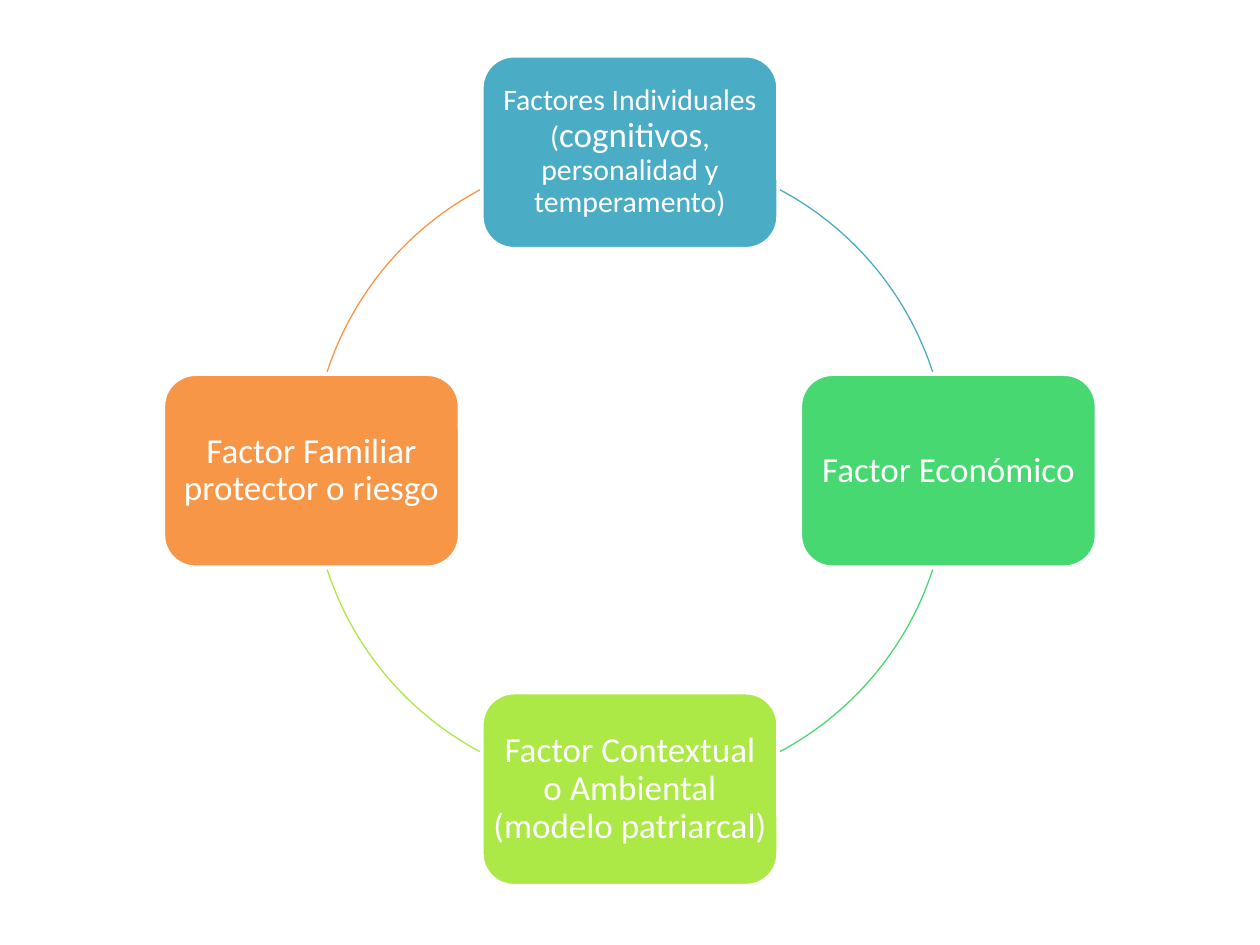
from dataclasses import dataclass
from math import cos, radians, sin

from pptx import Presentation
from pptx.dml.color import RGBColor
from pptx.enum.shapes import MSO_SHAPE as Preset
from pptx.enum.text import MSO_ANCHOR as Anchor, PP_ALIGN as Align
from pptx.shapes.shapetree import SlideShapes
from pptx.util import Cm, Pt

WHITE = RGBColor(0xFF, 0xFF, 0xFF)
BLUE = RGBColor(0x4B, 0xAC, 0xC6)
GREEN = RGBColor(0x47, 0xD8, 0x72)
LIME = RGBColor(0xAC, 0xE9, 0x46)
ORANGE = RGBColor(0xF7, 0x96, 0x46)

FONT = "Calibri"
CENTER_X, CENTER_Y, RADIUS = 12.7, 9.49, 6.42
BOX_WIDTH, BOX_HEIGHT = 5.97, 3.89
TEXT_INSET = Cm(0.03)
POLE_CLEARANCE, SIDE_CLEARANCE = 28.1, 18.1
ARC_UNITS_PER_DEGREE = 0.6


@dataclass(frozen=True)
class TextRun:
    text: str
    size: int = 20


@dataclass(frozen=True)
class Factor:
    color: RGBColor
    clearance: float
    runs: tuple[TextRun, ...]


FACTORS = (
    Factor(BLUE, POLE_CLEARANCE, (
        TextRun("Factores Individuales (", 17),
        TextRun("cognitivos"),
        TextRun(", personalidad y temperamento)", 17),
    )),
    Factor(GREEN, SIDE_CLEARANCE, (TextRun("Factor Económico"),)),
    Factor(LIME, POLE_CLEARANCE, (
        TextRun("Factor Contextual o Ambiental (modelo patriarcal)"),
    )),
    Factor(ORANGE, SIDE_CLEARANCE, (TextRun("Factor Familiar protector o riesgo"),)),
)


def draw_box(shapes: SlideShapes, factor: Factor, angle: float) -> None:
    left = CENTER_X + RADIUS * cos(radians(angle)) - BOX_WIDTH / 2
    top = CENTER_Y + RADIUS * sin(radians(angle)) - BOX_HEIGHT / 2
    shape = shapes.add_shape(
        Preset.ROUNDED_RECTANGLE, Cm(left), Cm(top), Cm(BOX_WIDTH), Cm(BOX_HEIGHT)
    )
    shape.shadow.inherit = False
    shape.fill.solid()
    shape.fill.fore_color.rgb = factor.color
    shape.line.color.rgb = WHITE
    shape.line.width = Pt(2)

    frame = shape.text_frame
    frame.word_wrap = True
    frame.vertical_anchor = Anchor.MIDDLE
    frame.margin_left = frame.margin_right = TEXT_INSET
    frame.margin_top = frame.margin_bottom = TEXT_INSET
    paragraph = frame.paragraphs[0]
    paragraph.alignment = Align.CENTER
    paragraph.line_spacing = 0.9
    for text_run in factor.runs:
        run = paragraph.add_run()
        run.text = text_run.text
        run.font.name = FONT
        run.font.size = Pt(text_run.size)
        run.font.color.rgb = WHITE


def draw_arc(shapes: SlideShapes, color: RGBColor, start: float, end: float) -> None:
    shape = shapes.add_shape(
        Preset.ARC,
        Cm(CENTER_X - RADIUS), Cm(CENTER_Y - RADIUS),
        Cm(2 * RADIUS), Cm(2 * RADIUS),
    )
    for index, angle in enumerate((start, end)):
        shape.adjustments[index] = angle % 360 * ARC_UNITS_PER_DEGREE
    shape.shadow.inherit = False
    shape.fill.background()
    shape.line.color.rgb = color
    shape.line.width = Pt(0.75)


def main() -> None:
    presentation = Presentation()
    presentation.slide_width = Cm(25.4)
    presentation.slide_height = Cm(19.05)
    slide = presentation.slides.add_slide(presentation.slide_layouts[6])
    step = 360 / len(FACTORS)
    for index, factor in enumerate(FACTORS):
        following = FACTORS[(index + 1) % len(FACTORS)]
        angle = index * step - 90
        draw_box(slide.shapes, factor, angle)
        draw_arc(
            slide.shapes,
            factor.color,
            angle + factor.clearance,
            angle + step - following.clearance,
        )
    presentation.save("out.pptx")


if __name__ == "__main__":
    main()
